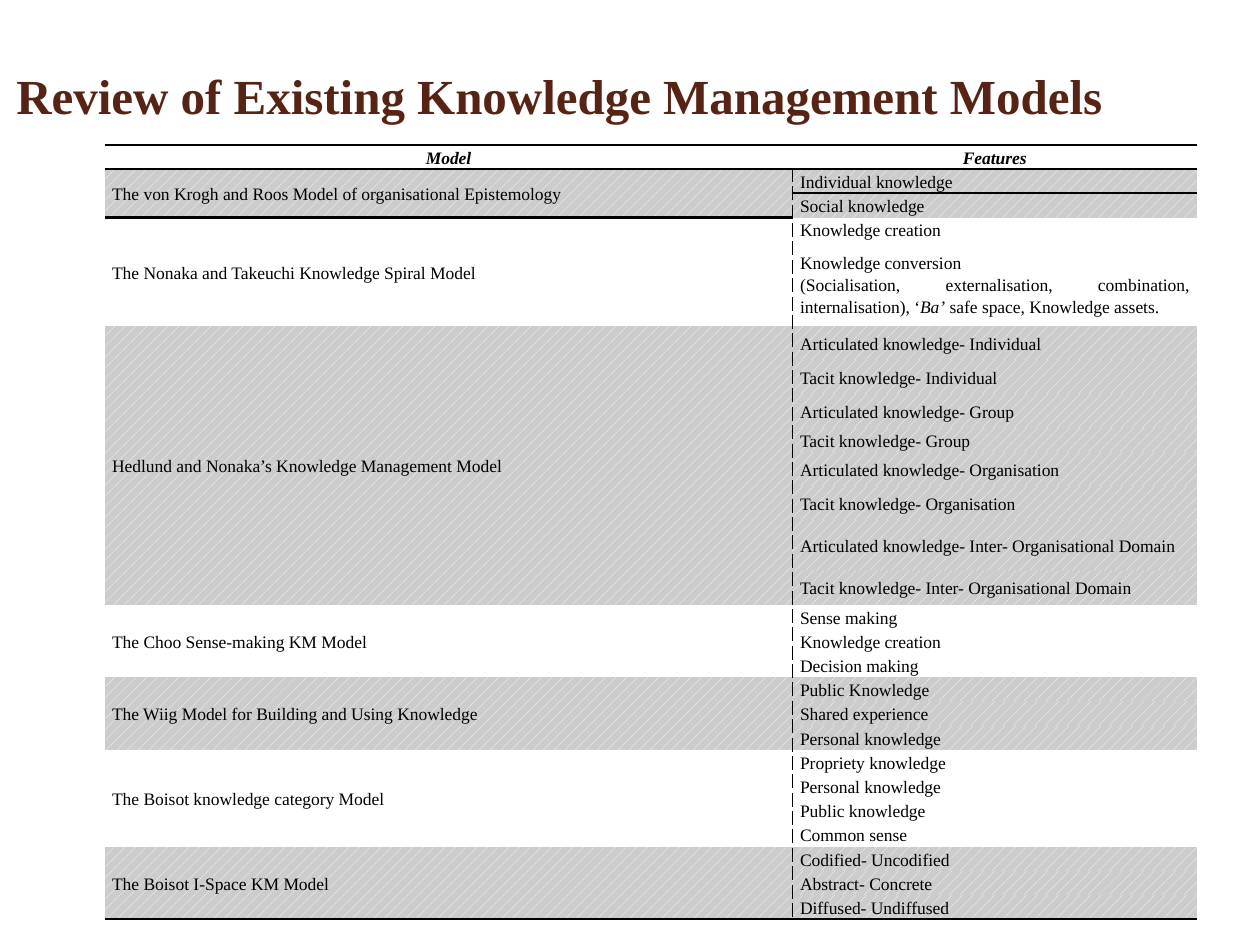
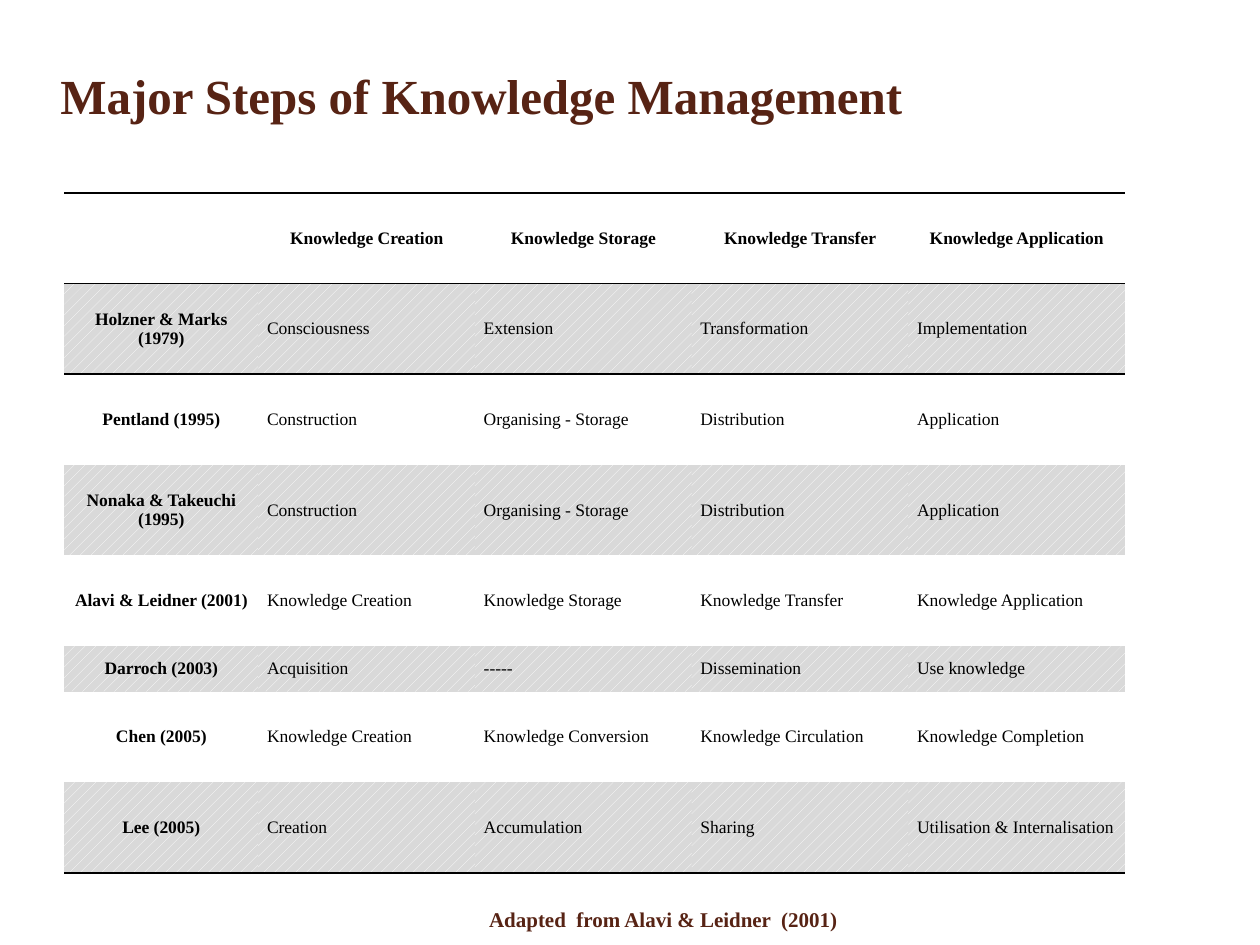
from lxml.etree import SubElement
from pptx import Presentation
from pptx.dml.color import RGBColor
from pptx.enum.dml import MSO_PATTERN
from pptx.enum.text import MSO_ANCHOR, PP_ALIGN
from pptx.oxml import parse_xml
from pptx.oxml.ns import nsdecls, qn
from pptx.util import Inches, Pt

FONT = "Times New Roman"
BROWN, BLACK, WHITE = "572314", "000000", "FFFFFF"
MODEL_BAND, STEP_BAND = "CCCCCC", "D9D9D9"
NO_STYLE = "{2D5ABB26-0587-4C30-8999-92F81FD0307C}"
THICK, THIN, DASHED = (1.5, "solid"), (1, "solid"), (1, "dash")
LINE = 0.18

MODELS = [
    ("The von Krogh and Roos Model of organisational Epistemology",
     [("Individual knowledge", LINE), ("Social knowledge", LINE)]),
    ("The Nonaka and Takeuchi Knowledge Spiral Model",
     [("Knowledge creation", LINE),
      ("Knowledge conversion\n(Socialisation, externalisation, combination, "
       "internalisation), ‘*Ba’* safe space, Knowledge assets.", 0.67)]),
    ("Hedlund and Nonaka’s Knowledge Management Model",
     [("Articulated knowledge- Individual", 0.27),
      ("Tacit knowledge- Individual", 0.27),
      ("Articulated knowledge- Group", 0.27),
      ("Tacit knowledge- Group", LINE),
      ("Articulated knowledge- Organisation", 0.27),
      ("Tacit knowledge- Organisation", 0.27),
      ("Articulated knowledge- Inter- Organisational Domain", 0.4),
      ("Tacit knowledge- Inter- Organisational Domain", 0.27)]),
    ("The Choo Sense-making KM Model",
     [("Sense making", LINE), ("Knowledge creation", LINE), ("Decision making", LINE)]),
    ("The Wiig Model for Building and Using Knowledge",
     [("Public Knowledge", LINE), ("Shared experience", LINE), ("Personal knowledge", LINE)]),
    ("The Boisot knowledge category Model",
     [("Propriety knowledge", LINE), ("Personal knowledge", LINE),
      ("Public knowledge", LINE), ("Common sense", LINE)]),
    ("The Boisot I-Space KM Model",
     [("Codified- Uncodified", LINE), ("Abstract- Concrete", LINE),
      ("Diffused- Undiffused", LINE)]),
]

STEPS = [
    ("", "Knowledge Creation", "Knowledge Storage", "Knowledge Transfer",
     "Knowledge Application"),
    ("Holzner & Marks (1979)", "Consciousness", "Extension", "Transformation",
     "Implementation"),
    ("Pentland (1995)", "Construction", "Organising - Storage", "Distribution",
     "Application"),
    ("Nonaka & Takeuchi (1995)", "Construction", "Organising - Storage", "Distribution",
     "Application"),
    ("Alavi & Leidner (2001)", "Knowledge Creation", "Knowledge Storage",
     "Knowledge Transfer", "Knowledge Application"),
    ("Darroch (2003)", "Acquisition", "-----", "Dissemination", "Use knowledge"),
    ("Chen (2005)", "Knowledge Creation", "Knowledge Conversion",
     "Knowledge Circulation", "Knowledge Completion"),
    ("Lee (2005)", "Creation", "Accumulation", "Sharing", "Utilisation & Internalisation"),
]


def rgb(value):
    """Turn a hex string into a colour."""
    return RGBColor.from_string(value)


def set_font(p, size, color, bold=False, italic=None):
    """Set the font of a paragraph."""
    p.font.name, p.font.size = FONT, Pt(size)
    p.font.bold, p.font.italic = bold, italic
    p.font.color.rgb = rgb(color)


def add_heading(slide, text, left, top, width, size, align=PP_ALIGN.LEFT):
    """Add a bold brown line of text."""
    box = slide.shapes.add_textbox(Inches(left), Inches(top), Inches(width), Inches(0.79))
    tf = box.text_frame
    tf.word_wrap = True
    tf.vertical_anchor = MSO_ANCHOR.MIDDLE
    tf.margin_left = Inches(0.13)
    p = tf.paragraphs[0]
    p.text, p.alignment = text, align
    set_font(p, size, BROWN, bold=True)


def add_plain_table(slide, left, top, widths, heights):
    """Add a table without a built-in style."""
    frame = slide.shapes.add_table(len(heights), len(widths), Inches(left), Inches(top),
                                   Inches(sum(widths)), Inches(sum(heights)))
    table = frame.table
    table.first_row = table.horz_banding = False
    table._tbl.tblPr.find(qn("a:tableStyleId")).text = NO_STYLE
    for column, width in zip(table.columns, widths):
        column.width = Inches(width)
    for row, height in zip(table.rows, heights):
        row.height = Inches(height)
    return table


def write_cell(cell, text, align, margin, spacing=None, bold=False, italic=None):
    """Write text lines into a cell, with starred parts in italics."""
    cell.vertical_anchor = MSO_ANCHOR.MIDDLE
    cell.margin_left = cell.margin_right = Inches(margin)
    cell.margin_top = cell.margin_bottom = 0
    for i, line in enumerate(text.split("\n")):
        tf = cell.text_frame
        p = tf.add_paragraph() if i else tf.paragraphs[0]
        p.alignment, p.line_spacing = align, spacing
        set_font(p, 10, BLACK, bold, italic)
        for j, part in enumerate(line.split("*")):
            r = p.add_run()
            r.text = part
            if j % 2:
                r.font.italic = True


def paint_cell(cell, band=None, **borders):
    """Set the hatched band and the borders (L, R, T, B) of a cell."""
    if band:
        cell.fill.patterned()
        cell.fill.pattern = MSO_PATTERN.PERCENT_20
        cell.fill.fore_color.rgb, cell.fill.back_color.rgb = rgb(WHITE), rgb(band)
    else:
        cell.fill.background()
    sides = [side for side in "LRTB" if borders.get(side)]
    for i, side in enumerate(sides):
        width, dash = borders[side]
        ln = parse_xml(f'<a:ln{side} {nsdecls("a")} w="{Pt(width)}"/>')
        fill = SubElement(ln, qn("a:solidFill"))
        SubElement(fill, qn("a:srgbClr")).set("val", BLACK)
        SubElement(ln, qn("a:prstDash")).set("val", dash)
        cell._tc.get_or_add_tcPr().insert(i, ln)


def add_model_table(slide, left, top):
    """Add the table of models and their features."""
    heights = [0.19] + [height for _, features in MODELS for _, height in features]
    table = add_plain_table(slide, left, top, [5.46, 3.21], heights)
    for col, text in enumerate(("Model", "Features")):
        cell = table.cell(0, col)
        write_cell(cell, text, PP_ALIGN.CENTER, 0.06, 1.15, bold=True, italic=True)
        paint_cell(cell, T=THICK, B=THICK)
    start = 1
    for i, (model, features) in enumerate(MODELS):
        band = None if i % 2 else MODEL_BAND
        end = start + len(features) - 1
        final = end == len(heights) - 1
        for row, (feature, _) in enumerate(features, start):
            name, detail = table.cell(row, 0), table.cell(row, 1)
            edge = THICK if row == 1 else None
            paint_cell(name, band, R=DASHED, T=edge, B=THICK if final and row in (start, end) else None)
            paint_cell(detail, band, L=DASHED, T=edge, B=THICK if final and row == end else None)
            write_cell(detail, feature, PP_ALIGN.JUSTIFY, 0.06, 1.15)
        write_cell(table.cell(start, 0), model, PP_ALIGN.JUSTIFY, 0.06, 1.15)
        table.cell(start, 0).merge(table.cell(end, 0))
        start = end + 1


def add_step_table(slide, left, top):
    """Add the table of steps named by each author."""
    heights = [0.36 if row[0].startswith("Darroch") else 0.72 for row in STEPS]
    table = add_plain_table(slide, left, top, [1.54] + [1.72] * 4, heights)
    last = len(STEPS) - 1
    for i, row in enumerate(STEPS):
        top_line = {0: THICK, 1: THIN}.get(i)
        bottom_line = {0: THIN, last: THICK}.get(i)
        for j, text in enumerate(row):
            head = i == 0 or j == 0
            cell = table.cell(i, j)
            paint_cell(cell, STEP_BAND if i % 2 else None, T=top_line, B=bottom_line)
            if text:
                write_cell(cell, text, PP_ALIGN.CENTER if head else PP_ALIGN.LEFT, 0.07, bold=head)


def add_titled_slide(prs, title, left):
    """Add a blank slide with a title."""
    slide = prs.slides.add_slide(prs.slide_layouts[6])
    add_heading(slide, title, left, 0.36, 9.53, 28)
    return slide


def main():
    """Build both slides and save them."""
    prs = Presentation()
    prs.slide_width, prs.slide_height = Inches(10), Inches(7.5)
    s = add_titled_slide(prs, "Review of Existing Knowledge Management Models", 0)
    add_model_table(s, 0.83, 1.15)
    s = add_titled_slide(prs, "Major Steps of Knowledge Management", 0.35)
    add_step_table(s, 0.51, 1.53)
    add_heading(s, "Adapted  from Alavi & Leidner  (2001)", 2.83, 6.9, 4.84, 12, PP_ALIGN.CENTER)
    prs.save("out.pptx")


if __name__ == "__main__":
    main()
